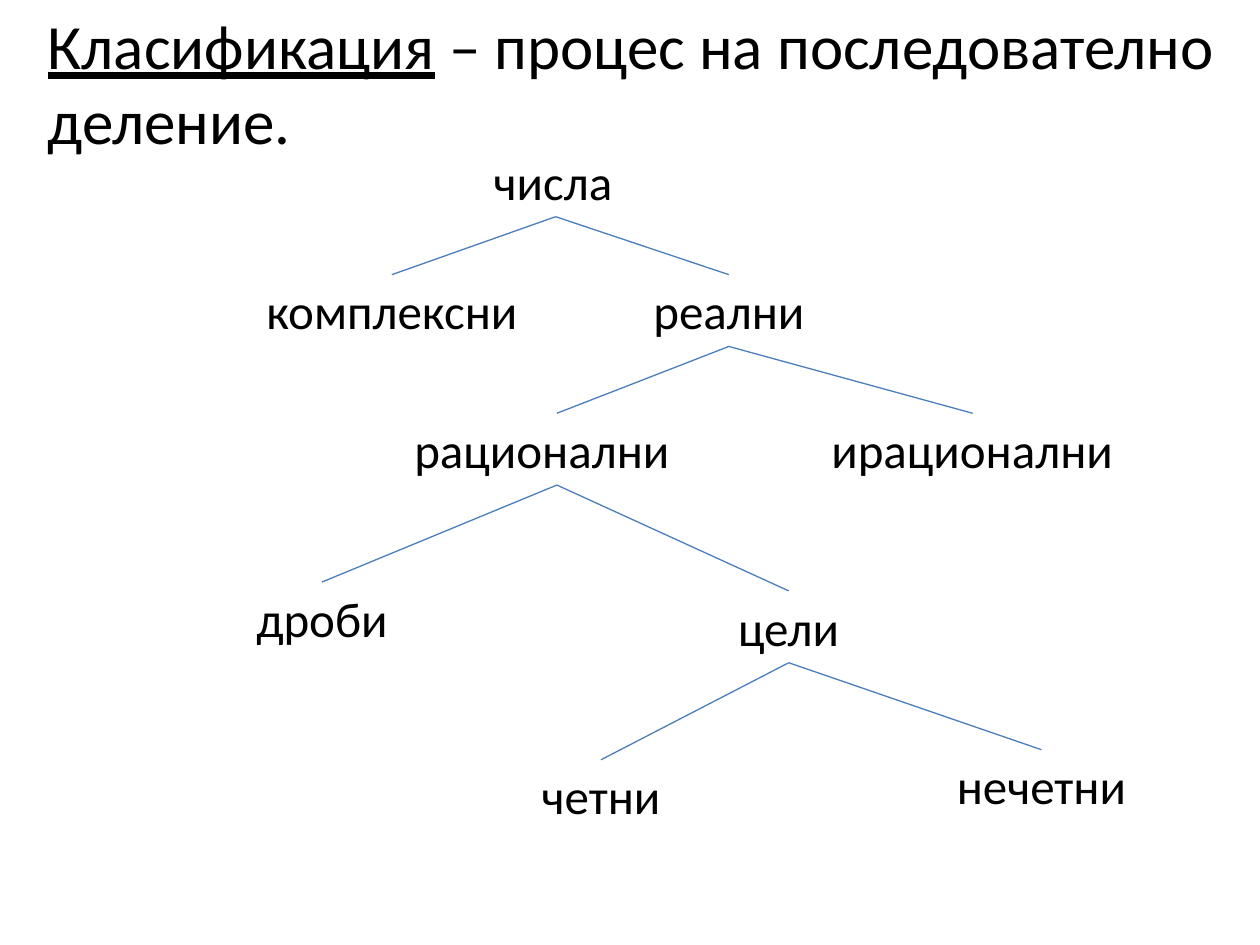
from pptx import Presentation
from pptx.dml.color import RGBColor
from pptx.enum.shapes import MSO_CONNECTOR
from pptx.enum.text import MSO_AUTO_SIZE, PP_ALIGN
from pptx.oxml.ns import qn
from pptx.util import Inches, Pt
from lxml.etree import SubElement

COLORS = {"text": "000000", "branch": "4B7EBC"}
FONT = "Calibri"
TOP, LEFT, BOTTOM, RIGHT = range(4)
NODE_HEIGHT = 0.57

TITLE = [("Класификация", True), (" – процес на последователно деление.", False)]

NODES = {
    "числа": (3.82, 1.15, 1.18, PP_ALIGN.LEFT),
    "комплексни": (1.85, 2.18, 2.52, PP_ALIGN.CENTER),
    "реални": (5, 2.18, 1.57, PP_ALIGN.CENTER),
    "рационални": (3.19, 3.28, 2.46, PP_ALIGN.LEFT),
    "ирационални": (6.5, 3.28, 2.44, PP_ALIGN.LEFT),
    "дроби": (1.77, 4.62, 1.57, PP_ALIGN.CENTER),
    "цели": (5.71, 4.69, 1.1, PP_ALIGN.CENTER),
    "четни": (4.06, 6.03, 1.42, PP_ALIGN.CENTER),
    "нечетни": (7.36, 5.95, 1.81, PP_ALIGN.CENTER),
}

DIVISIONS = {
    "числа": ("комплексни", "реални"),
    "реални": ("рационални", "ирационални"),
    "рационални": ("дроби", "цели"),
    "цели": ("четни", "нечетни"),
}


def add_text(slide, runs, left, top, width, height, size=28,
             align=PP_ALIGN.LEFT, wrap=False):
    box = slide.shapes.add_textbox(*map(Inches, (left, top, width, height)))
    frame = box.text_frame
    frame.word_wrap = wrap
    frame.auto_size = MSO_AUTO_SIZE.SHAPE_TO_FIT_TEXT
    paragraph = frame.paragraphs[0]
    paragraph.alignment = align
    for text, underlined in runs:
        run = paragraph.add_run()
        run.text = text
        run.font.name = FONT
        run.font.size = Pt(size)
        run.font.underline = underlined
        run.font.color.rgb = RGBColor.from_string(COLORS["text"])
    return box


def add_branch(slide, parent, child):
    connector = slide.shapes.add_connector(MSO_CONNECTOR.STRAIGHT, 0, 0, 0, 0)
    connector.begin_connect(parent, BOTTOM)
    connector.end_connect(child, TOP)
    connector.line.color.rgb = RGBColor.from_string(COLORS["branch"])
    connector.line.width = Pt(0.75)
    SubElement(connector._element.spPr, qn("a:effectLst"))


def main():
    presentation = Presentation()
    presentation.slide_width = Inches(10)
    presentation.slide_height = Inches(7.5)
    slide = presentation.slides.add_slide(presentation.slide_layouts[6])

    add_text(slide, TITLE, 0.28, 0, 9.72, 1.31, size=36, wrap=True)
    boxes = {
        name: add_text(slide, [(name, False)], left, top, width, NODE_HEIGHT, align=align)
        for name, (left, top, width, align) in NODES.items()
    }
    for parent, children in DIVISIONS.items():
        for child in children:
            add_branch(slide, boxes[parent], boxes[child])

    presentation.save("out.pptx")


if __name__ == "__main__":
    main()
